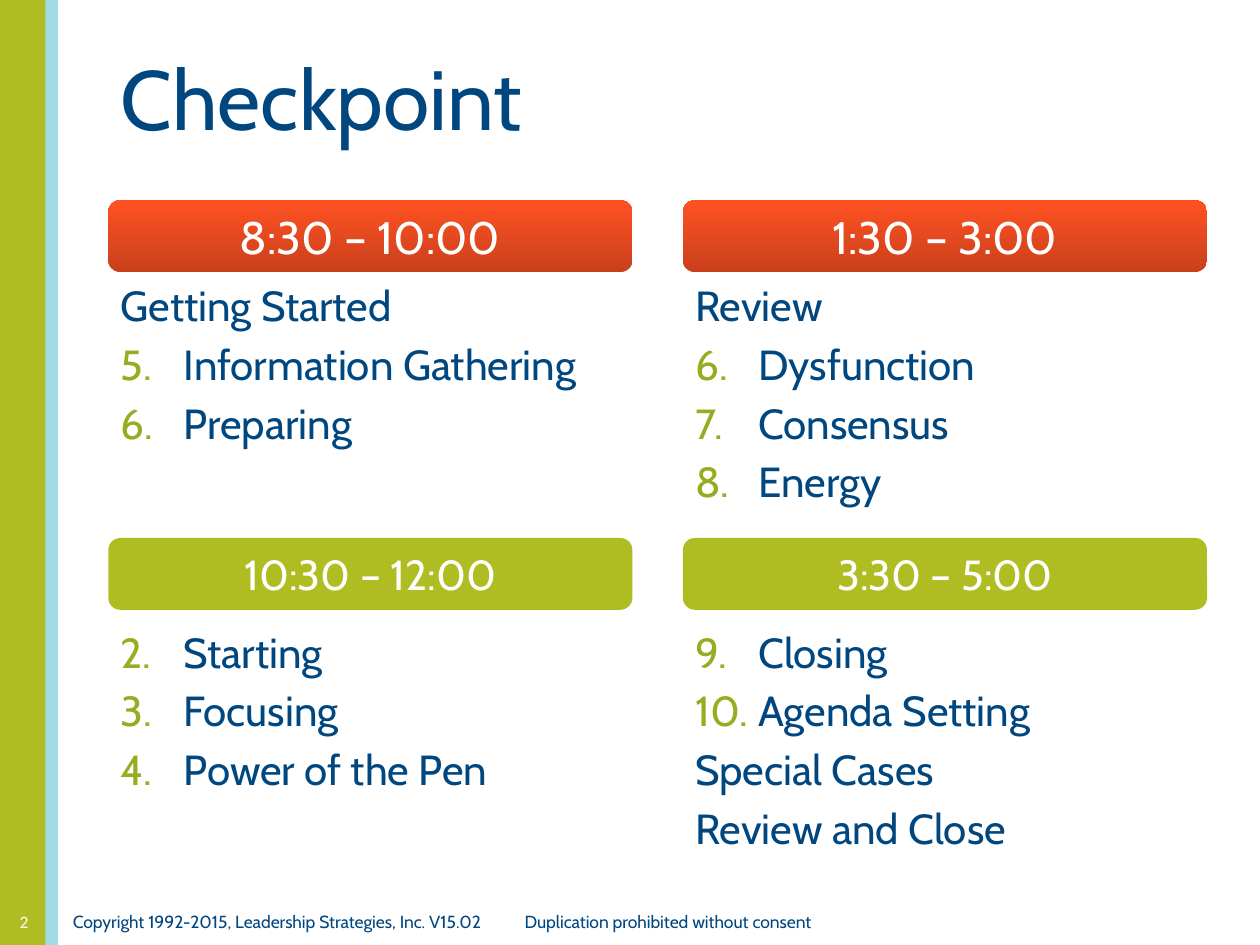
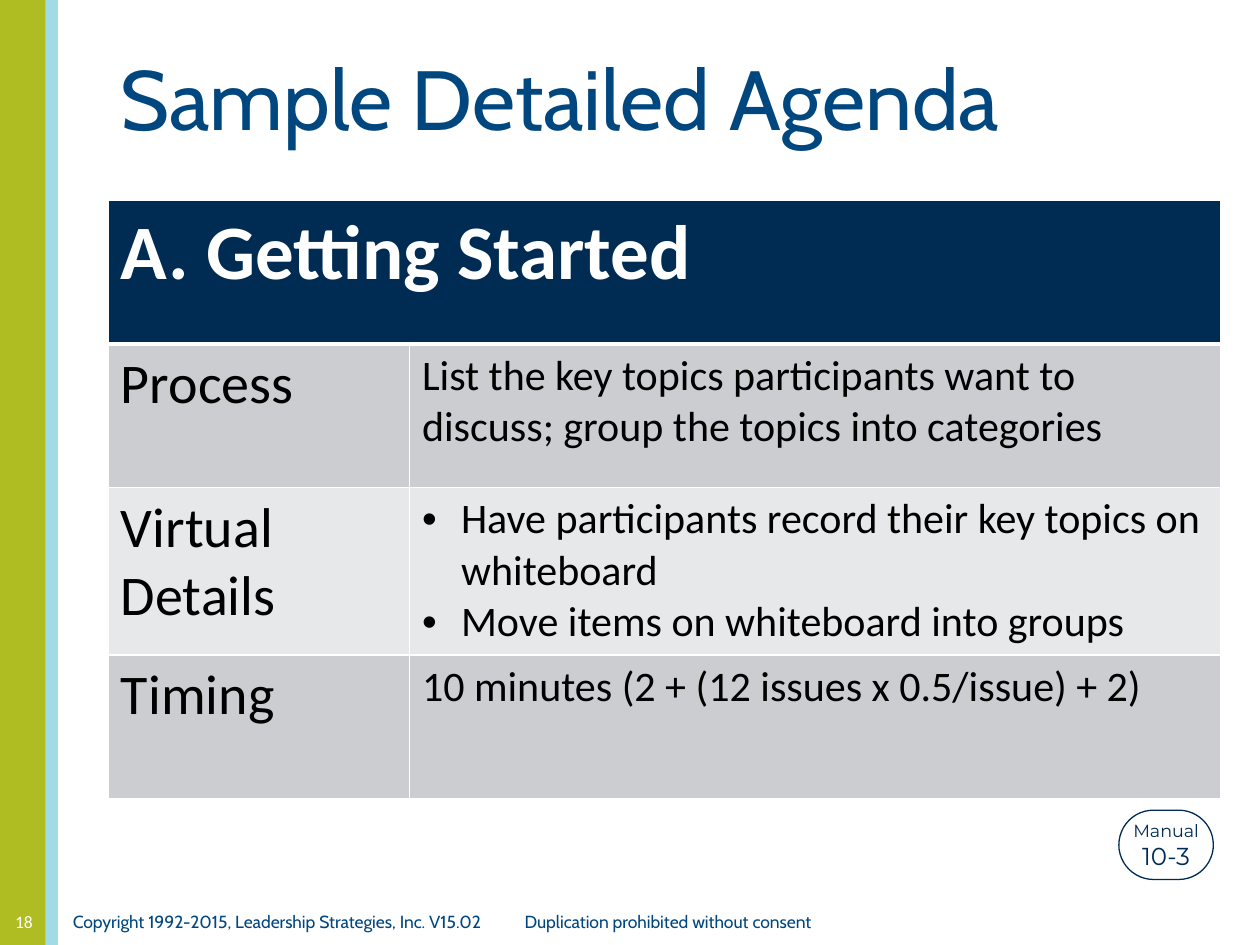
from pptx import Presentation
from pptx.dml.color import RGBColor
from pptx.enum.shapes import MSO_SHAPE
from pptx.enum.text import MSO_ANCHOR, PP_ALIGN
from pptx.oxml.ns import qn
from pptx.util import Inches, Pt
from lxml import etree

RECT, ROUND = MSO_SHAPE.RECTANGLE, MSO_SHAPE.ROUNDED_RECTANGLE
TOP, MID, BASE = MSO_ANCHOR.TOP, MSO_ANCHOR.MIDDLE, MSO_ANCHOR.BOTTOM
LEFT, MIDST = PP_ALIGN.LEFT, PP_ALIGN.CENTER
HUE = {
    "lime": "AFBD22", "sky": "A0DBE6", "blue": "00467F", "leaf": "99AB21",
    "rust": "C9401B", "fire": "FF5223", "navy": "002C54", "white": "FFFFFF",
    "black": "000000", "grey": "CCCDD1", "pale": "E7E8E9",
}
RGB = {name: RGBColor.from_string(code) for name, code in HUE.items()}
WIDE, HIGH = 10, 7.5
EDGE, HEAD = 0.86, 1.59
COL, GAP, BAR = 4.16, 0.4, 0.57
BAND = 2.68
FULL = 8.83


def put(page, kind, at, fill=None, anchor=TOP, wrap=True):
    at = [Inches(n) for n in at]
    if kind is None:
        box = page.shapes.add_textbox(*at)
    else:
        box = page.shapes.add_shape(kind, *at)
        box.shadow.inherit = False
        box.line.fill.background()
    if fill:
        box.fill.solid()
        box.fill.fore_color.rgb = RGB[fill]
    box.text_frame.word_wrap = wrap
    box.text_frame.vertical_anchor = anchor
    return box


def write(para, words, size, hue="blue", face="Cabin", align=LEFT, bold=False):
    para.alignment = align
    run = para.add_run()
    run.text = words
    run.font.size = Pt(size)
    run.font.name = face
    run.font.bold = bold
    run.font.color.rgb = RGB[hue]


deck = Presentation()
deck.slide_width, deck.slide_height = Inches(WIDE), Inches(HIGH)
blank = deck.slide_layouts[6]

pages = []
for title, number in (("Checkpoint", "2"), ("Sample Detailed Agenda", "18")):
    page = deck.slides.add_slide(blank)
    pages.append(page)
    put(page, RECT, (0, 0, 0.38, HIGH), "lime")
    put(page, RECT, (0.36, 0, 0.1, HIGH), "sky")
    for left, width, align, words in (
        (0.48, 3.57, LEFT, "Copyright 1992-2015, Leadership Strategies, Inc. V15.02"),
        (4.06, 2.48, MIDST, "Duplication prohibited without consent"),
    ):
        foot = put(page, None, (left, 7.18, width, 0.27), wrap=False)
        write(foot.text_frame.paragraphs[0], words, 10, align=align)
    mark = put(page, None, (0, 7.05, 0.38, 0.4), anchor=BASE)
    write(mark.text_frame.paragraphs[0], number, 10, "white", "Calibri", MIDST)
    head = put(page, None, (EDGE, 0.14, FULL, 1.25), anchor=MID)
    write(head.text_frame.paragraphs[0], title, 48)

check, agenda = pages

blocks = (
    (0, 0, "8:30 – 10:00", 5, ("Getting Started",), ("Information Gathering", "Preparing"), ()),
    (1, 0, "1:30 – 3:00", 6, ("Review",), ("Dysfunction", "Consensus", "Energy"), ()),
    (0, 1, "10:30 – 12:00", 2, (), ("Starting", "Focusing", "Power of the Pen"), ()),
    (1, 1, "3:30 – 5:00", 9, (), ("Closing", "Agenda Setting"),
     ("Special Cases", "Review and Close")),
)
for col, row, hours, start, intro, topics, close in blocks:
    left, top = EDGE + col * (COL + GAP), HEAD + row * BAND
    bar = put(check, ROUND, (left, top, COL, BAR), "lime", MID)
    if row == 0:
        bar.fill.gradient()
        bar.fill.gradient_angle = 90
        for stop, hue, spot in zip(bar.fill.gradient_stops, ("rust", "fire"), (0, 1)):
            stop.color.rgb = RGB[hue]
            stop.position = spot
    write(bar.text_frame.paragraphs[0], hours, 24 if row else 26, "white", align=MIDST)

    body = put(check, None, (left, top + (0.65 if row else 0.58), COL, 2.24)).text_frame
    for i, words in enumerate(intro + topics + close):
        para = body.add_paragraph() if i else body.paragraphs[0]
        if i:
            para.space_before = Pt(4.8)
        if words in topics:
            props = para._p.get_or_add_pPr()
            props.set("marL", str(Inches(0.5)))
            props.set("indent", str(-Inches(0.5)))
            tint = etree.SubElement(props, qn("a:buClr"))
            etree.SubElement(tint, qn("a:srgbClr"), val=HUE["leaf"])
            etree.SubElement(props, qn("a:buAutoNum"), type="arabicPeriod", startAt=str(start))
        write(para, words, 24)

rows = (
    ("navy", ("A. Getting Started",), ()),
    ("grey", ("Process",),
     ("List the key topics participants want to discuss; group the topics into categories",)),
    ("pale", ("Virtual Details",),
     ("Have participants record their key topics on whiteboard",
      "Move items on whiteboard into groups")),
    ("grey", ("Timing",), ("10 minutes (2 + (12 issues x 0.5/issue) + 2)",)),
)
tall = (1.14, 1.14, 1.33, 1.14)
grid = agenda.shapes.add_table(
    len(rows), 2, Inches(EDGE), Inches(HEAD), Inches(FULL), Inches(sum(tall))).table
grid.horz_banding = False
for col, width in zip(grid.columns, (2.39, 6.44)):
    col.width = Inches(width)
for r, (fill, *cells) in enumerate(rows):
    grid.rows[r].height = Inches(tall[r])
    for c, lines in enumerate(cells):
        cell = grid.cell(r, c)
        props = cell._tc.get_or_add_tcPr()
        for side in "LRTB":
            thick = 3 if (r, side) in ((0, "B"), (1, "T")) else 1
            edge = etree.SubElement(props, qn("a:ln" + side), w=str(Pt(thick)))
            ink = etree.SubElement(edge, qn("a:solidFill"))
            etree.SubElement(ink, qn("a:srgbClr"), val=HUE["white"])
        cell.fill.solid()
        cell.fill.fore_color.rgb = RGB[fill]
        for i, words in enumerate(lines):
            para = cell.text_frame.add_paragraph() if i else cell.text_frame.paragraphs[0]
            if len(lines) > 1:
                props = para._p.get_or_add_pPr()
                props.set("marL", str(Inches(0.31)))
                props.set("indent", str(-Inches(0.31)))
                etree.SubElement(props, qn("a:buFont"), typeface="Arial")
                etree.SubElement(props, qn("a:buChar"), char="•")
            size = 44 if r == 0 else 24 if c else 32
            write(para, words, size, "black" if r else "white", "Calibri", bold=r == 0)
grid.cell(0, 0).merge(grid.cell(0, 1))

badge = put(agenda, ROUND, (8.88, 6.43, 0.75, 0.55), "white", MID, False)
badge.adjustments[0] = 0.5
badge.line.color.rgb = RGB["navy"]
badge.line.width = Pt(0.75)
para = badge.text_frame.paragraphs[0]
write(para, "Manual", 10, "navy", "Montserrat", MIDST)
para.add_line_break()
write(para, "10-3", 14, "navy", "Montserrat", MIDST)

deck.save("out.pptx")
